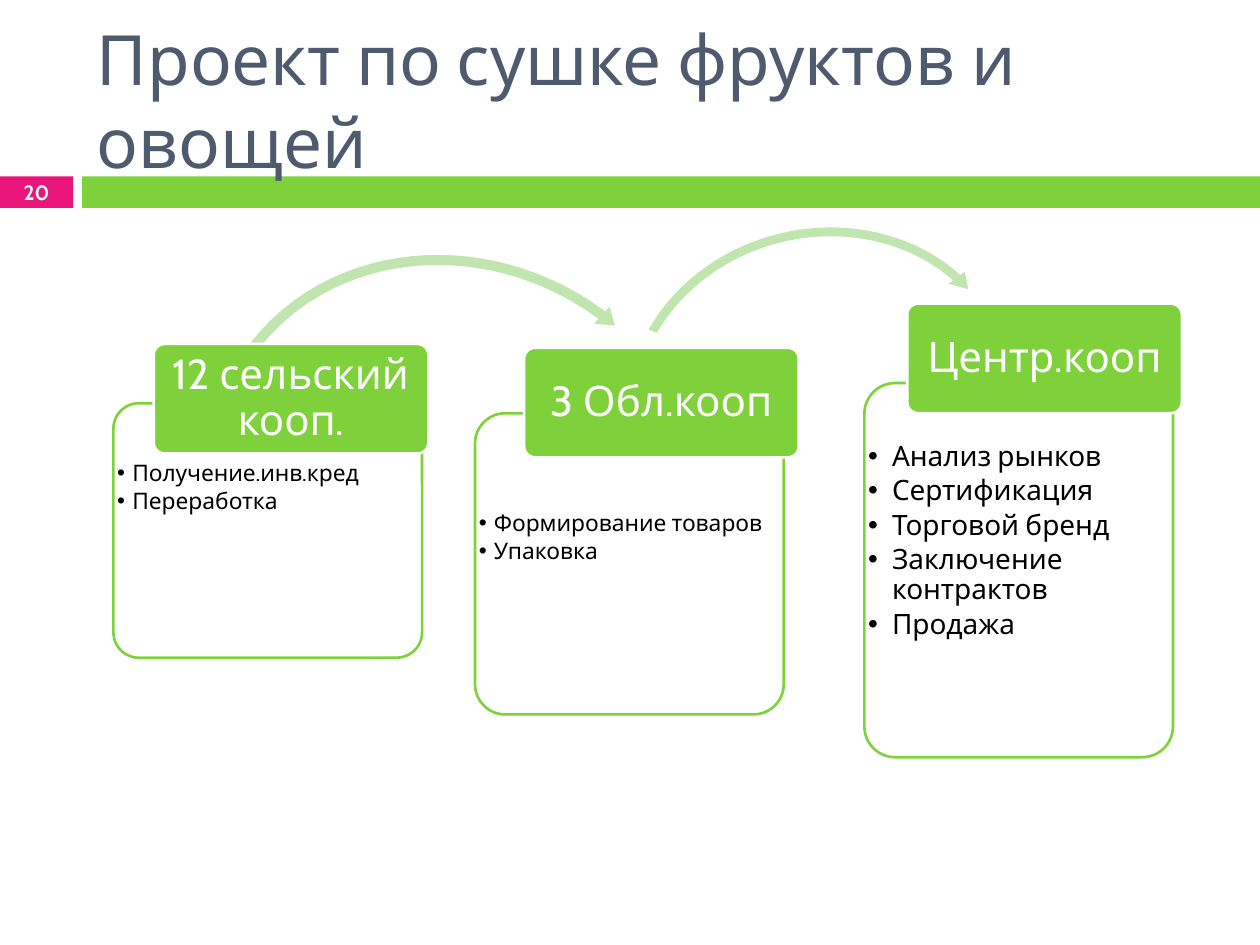
from lxml.etree import SubElement
from pptx import Presentation
from pptx.dml.color import RGBColor
from pptx.enum.shapes import MSO_SHAPE
from pptx.enum.text import MSO_ANCHOR, PP_ALIGN
from pptx.oxml.ns import qn
from pptx.util import Inches, Pt

# The grid has 100 columns and 75 rows of 0.1 inch each
CELL = 0.1
COLUMNS, ROWS = 100, 75

GREEN, PALE_GREEN, PINK = "7FD13B", "C0E5AF", "EA157A"
SLATE, WHITE, BLACK = "4E5B6F", "FFFFFF", "000000"

CARD_WIDTH, HEADER_WIDTH, HEADER_HEIGHT = 24.5, 21.8, 8.7
CARD_INSETS = (0.3, 0.3, 0.3, 0.3)
HEADER_INSETS = (0.5, 0.3, 0.5, 0.3)

# card and header: left, top; text: top, height, room above the first line
STAGES = [
    dict(title="12 сельский кооп.", header=(12.2, 27.3), card=(9, 32),
         card_height=20.2, text=(32, 15.9, 5.35), size=13, indent=1.2,
         points=["Получение.инв.кред", "Переработка"]),
    dict(title="3 Обл.кооп", header=(41.6, 27.6), card=(37.7, 32.8),
         card_height=23.9, text=(37.9, 18.8, 2.7), size=13, indent=1.2,
         points=["Формирование товаров", "Упаковка"]),
    dict(title="Центр.кооп", header=(72, 24.1), card=(68.6, 30.4),
         card_height=29.7, text=(30.4, 23.3, 4.7), size=16, indent=1.9,
         points=["Анализ рынков", "Сертификация", "Торговой бренд",
                 "Заключение контрактов", "Продажа"]),
]

# widths: band and head in percent of the size
# angles: head, end and start in degrees
ARROWS = [
    dict(form=MSO_SHAPE.LEFT_CIRCULAR_ARROW, place=(15.4, 20.2, 42.1, 38.2),
         turn=209.3, mirrored=True, widths=(2.1, 2.4),
         angles=(4.12, 80.94, 197.64)),
    dict(form=MSO_SHAPE.CIRCULAR_ARROW, place=(49.2, 17.7, 31.7, 28.1),
         turn=346, mirrored=False, widths=(2.5, 2.9),
         angles=(5.02, 332.25, 216.45)),
]


def grid(*cells):
    return [Inches(cell * CELL) for cell in cells]


def color(hex_code):
    return RGBColor.from_string(hex_code)


def apply(target, values):
    for name, value in values.items():
        setattr(target, name, value)


def add_block(slide, form, place, fill, outline=None):
    block = slide.shapes.add_shape(form, *grid(*place))
    block.shadow.inherit = False
    block.fill.solid()
    block.fill.fore_color.rgb = color(fill)
    if outline:
        block.line.color.rgb = color(outline)
        block.line.width = Pt(1.5)
    else:
        block.line.fill.background()
    return block


def write(shape, lines, size, ink, insets=(1, 0.5, 1, 0.5), bold=False,
          anchor=MSO_ANCHOR.MIDDLE, **paragraph_format):
    left, top, right, bottom = grid(*insets)
    frame = shape.text_frame
    apply(frame, dict(word_wrap=True, vertical_anchor=anchor, margin_left=left,
                      margin_top=top, margin_right=right, margin_bottom=bottom))
    frame.text = "\n".join(lines)
    for paragraph in frame.paragraphs:
        apply(paragraph, paragraph_format)
        font = paragraph.runs[0].font
        apply(font, dict(name="Cabin", size=Pt(size), bold=bold))
        font.color.rgb = color(ink)
    return frame


def add_text(slide, place, lines, size, ink, **text_format):
    box = slide.shapes.add_textbox(*grid(*place))
    return write(box, lines, size, ink, **text_format)


def add_bullets(frame, indent):
    hang = grid(indent)[0]
    for paragraph in frame.paragraphs:
        properties = paragraph._p.get_or_add_pPr()
        properties.set("marL", str(hang))
        properties.set("indent", str(-hang))
        SubElement(properties, qn("a:buFont"), typeface="Arial")
        SubElement(properties, qn("a:buChar"), char="•")


def add_card(slide, stage):
    left, top = stage["card"]
    card = add_block(slide, MSO_SHAPE.ROUNDED_RECTANGLE,
                     (left, top, CARD_WIDTH, stage["card_height"]), WHITE, GREEN)
    card.adjustments[0] = 0.1
    tint = card._element.spPr.find(qn("a:solidFill"))[0]
    SubElement(tint, qn("a:alpha"), val="90000")

    text_top, text_height, room = stage["text"]
    side, _, right, bottom = CARD_INSETS
    size = stage["size"]
    points = add_text(slide, (left, text_top, CARD_WIDTH, text_height),
                      stage["points"], size, BLACK,
                      insets=(side, room, right, bottom), anchor=MSO_ANCHOR.TOP,
                      level=1, line_spacing=0.9, space_after=Pt(0.15 * size))
    add_bullets(points, stage["indent"])


def add_header(slide, stage):
    header = add_block(slide, MSO_SHAPE.ROUNDED_RECTANGLE,
                       (*stage["header"], HEADER_WIDTH, HEADER_HEIGHT), GREEN, WHITE)
    header.adjustments[0] = 0.1
    write(header, [stage["title"]], 24, WHITE, insets=HEADER_INSETS,
          alignment=PP_ALIGN.CENTER, line_spacing=0.9)


def add_arrow(slide, arrow):
    bow = add_block(slide, arrow["form"], arrow["place"], PALE_GREEN)
    bow.rotation = arrow["turn"]
    if arrow["mirrored"]:
        bow._element.spPr.xfrm.set("flipH", "1")
    band, head = (width / 100 for width in arrow["widths"])
    # Angles are stored in 1/60000 degree, adjustments in 1/100000
    angles = [angle * 0.6 for angle in arrow["angles"]]
    for index, value in enumerate([band, *angles, head]):
        bow.adjustments[index] = value


def main():
    deck = Presentation()
    deck.slide_width, deck.slide_height = grid(COLUMNS, ROWS)
    slide = deck.slides.add_slide(deck.slide_layouts[6])

    # Band, title and page number
    add_block(slide, MSO_SHAPE.RECTANGLE, (0, 14, 5.8, 2.5), PINK)
    add_block(slide, MSO_SHAPE.RECTANGLE, (6.5, 14, 93.5, 2.5), GREEN)
    add_text(slide, (6.7, 2.5, 89.2, 10.8),
             ["Проект по сушке фруктов и овощей"], 39.6, SLATE)
    add_text(slide, (0, 13.9, 5.8, 2.7), ["20"], 11.9, WHITE,
             bold=True, alignment=PP_ALIGN.CENTER)

    # Stages, each with an arrow to the next one
    for stage, arrow in zip(STAGES, [*ARROWS, None]):
        add_card(slide, stage)
        if arrow:
            add_arrow(slide, arrow)
        add_header(slide, stage)

    deck.save("out.pptx")


if __name__ == "__main__":
    main()
